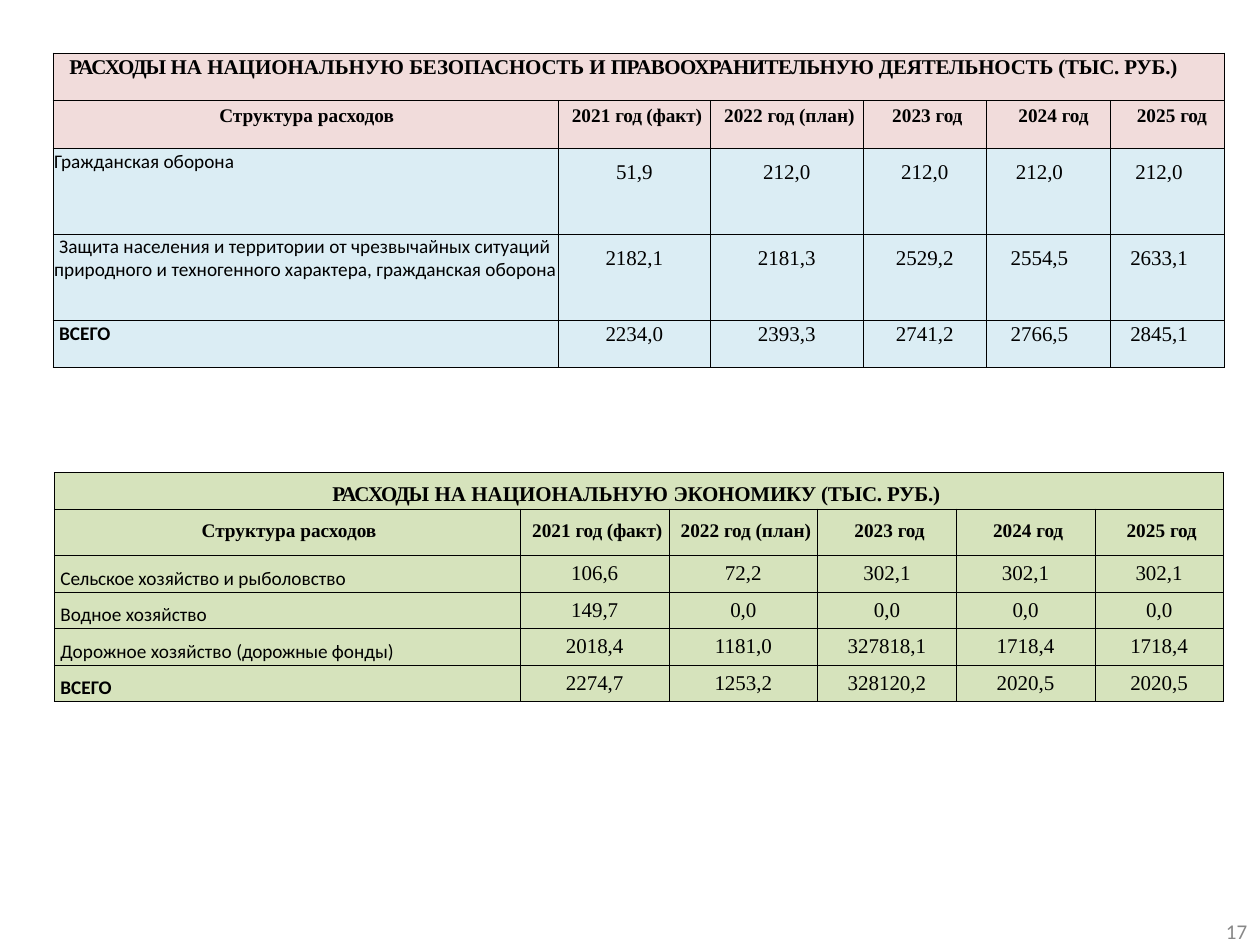
from lxml import etree
from pptx import Presentation
from pptx import util as u
from pptx.dml.color import RGBColor
from pptx.enum import text
from pptx.oxml import ns

LEFT, CENTER, RIGHT = text.PP_ALIGN.LEFT, text.PP_ALIGN.CENTER, text.PP_ALIGN.RIGHT


def color(value):
    return RGBColor.from_string(value)


class BudgetSlide:
    """Holds the fonts, colours and current slide, and draws its elements."""

    serif, sans = "Times New Roman", "Calibri"
    ink, muted = "000000", "888888"

    def __init__(self, presentation):
        self.slide = presentation.slides.add_slide(presentation.slide_layouts[6])

    def paragraph(self, paragraph, runs, font, size, bold=False, hue=ink,
                  align=LEFT, indent=0, line=None):
        properties = paragraph._p.get_or_add_pPr()
        properties.set("marL", str(u.Inches(indent)))
        properties.set("indent", "0")
        paragraph.alignment = align
        if line:
            paragraph.line_spacing = u.Pt(line)
        paragraph.font.name, paragraph.font.size = font, u.Pt(size)
        paragraph.font.bold = bold
        paragraph.font.color.rgb = color(hue)
        for words, tracking in runs:
            run = paragraph.add_run()
            run.text = words
            if tracking:
                run._r.get_or_add_rPr().set("spc", str(round(tracking * 100)))

    def page_number(self, number, left, top, width, height):
        box = self.slide.shapes.add_textbox(*map(u.Inches, (left, top, width, height)))
        frame = box.text_frame
        frame.margin_left = frame.margin_right = frame.margin_bottom = 0
        frame.margin_top = u.Inches(0.1)
        self.paragraph(frame.paragraphs[0], [(number, 0)], self.sans, 12,
                       hue=self.muted, indent=0.04, line=12.4)

    def table(self, left, top, columns, rows):
        sizes = map(u.Inches, (left, top, sum(columns), sum(rows)))
        table = self.slide.shapes.add_table(len(rows), len(columns), *sizes).table
        table.first_row = table.horz_banding = False
        for column, width in zip(table.columns, columns):
            column.width = u.Inches(width)
        for row, height in zip(table.rows, rows):
            row.height = u.Inches(height)
        table.cell(0, 0).merge(table.cell(0, len(columns) - 1))
        return table

    def border(self, cell):
        properties = cell._tc.get_or_add_tcPr()
        for side in ("a:lnL", "a:lnR", "a:lnT", "a:lnB"):
            line = etree.SubElement(properties, ns.qn(side), w=str(u.Pt(0.5)))
            fill = etree.SubElement(line, ns.qn("a:solidFill"))
            etree.SubElement(fill, ns.qn("a:srgbClr"), val=self.ink)

    def fill_rows(self, table, fills):
        for row, fill in zip(table.rows, fills):
            for cell in row.cells:
                self.border(cell)
                cell.fill.solid()
                cell.fill.fore_color.rgb = color(fill)

    def cell(self, cell, lines, font, size, top, right=0, **style):
        cell.margin_left = cell.margin_bottom = 0
        cell.margin_top, cell.margin_right = u.Inches(top), u.Inches(right)
        frame = cell.text_frame
        for index, runs in enumerate(lines):
            paragraph = frame.add_paragraph() if index else frame.paragraphs[0]
            self.paragraph(paragraph, runs, font, size, **style)

    def title(self, table, runs, **style):
        self.cell(table.cell(0, 0), [runs], self.serif, 12, bold=True, line=13.7, **style)

    def header(self, table, indent, top, line, aligns, rights):
        style = dict(font=self.serif, size=11, top=top, line=line, bold=True)
        self.cell(table.cell(1, 0), [[("Структура расходов", 0)]], indent=indent, **style)
        for index, (runs, align, right) in enumerate(zip(YEARS, aligns, rights), 1):
            self.cell(table.cell(1, index), [runs], align=align, right=right,
                      indent=0.04 if align == CENTER else 0, **style)

    def record(self, table, row, lines, values, name_top, value_top,
               indent=0.05, line=None, rights=(0,) * 5):
        self.cell(table.cell(row, 0), lines, self.sans, 11, name_top, indent=indent,
                  line=12.8, bold=lines == TOTAL)
        for index, (value, right) in enumerate(zip(values.split(), rights), 1):
            self.cell(table.cell(row, index), [[(value, 0)]], self.serif, 12,
                      value_top, right, align=CENTER, line=line)


YEARS = [
    [("2021 ", 0), ("год (факт)", -0.1)],
    [("2022 ", 0), ("год ", -0.1), ("(план)", 0)],
    *([(f"{year} ", 0), ("год", -0.1)] for year in (2023, 2024, 2025)),
]
TOTAL = [[("ВСЕГО", 0)]]


def security_table(page):
    table = page.table(0.42, 0.42, [4.01, 1.21, 1.21, 0.98, 0.98, 0.91],
                       [0.38, 0.38, 0.68, 0.68, 0.38])
    page.fill_rows(table, ["F1DCDB"] * 2 + ["DBEDF4"] * 3)
    page.title(table, [("РАСХОДЫ ", -0.6), ("НА НАЦИОНАЛЬНУЮ", 0),
                       (" БЕЗОПАСНОСТЬ ", -0.1), ("И ", 0),
                       ("ПРАВООХРАНИТЕЛЬНУЮ ", -0.3),
                       ("ДЕЯТЕЛЬНОСТЬ (ТЫС. РУБ.)", -0.1)], top=0.02, indent=0.13)
    page.header(table, 1.32, 0.03, 12.5, [CENTER] * 3 + [RIGHT] * 2,
                [0, 0, 0, 0.17, 0.14])
    rights = [0, 0, 0, 0.14, 0.13]
    page.record(table, 2, [[("Гражданская оборона", 0)]],
                "51,9 212,0 212,0 212,0 212,0", 0.02, 0.1, 0.01, rights=rights)
    protection = [[("Защита населения и территории от чрезвычайных ситуаций", 0)],
                  [("природного и техногенного характера, гражданская оборона", 0)]]
    page.record(table, 3, protection, "2182,1 2181,3 2529,2 2554,5 2633,1",
                0.02, 0.1, 0.01, rights=rights)
    first_line = table.cell(3, 0).text_frame.paragraphs[0]
    first_line._p.get_or_add_pPr().set("marL", str(u.Inches(0.05)))
    page.record(table, 4, TOTAL, "2234,0 2393,3 2741,2 2766,5 2845,1",
                0.03, 0.01, line=14, rights=rights)


def economy_table(page):
    table = page.table(0.43, 3.75, [3.7, 1.18, 1.18, 1.1, 1.1, 1.02],
                       [0.29, 0.37] + [0.29] * 4)
    page.fill_rows(table, ["D6E3BC"] * 6)
    page.title(table, [("РАСХОДЫ", -0.6), (" НА НАЦИОНАЛЬНУЮ ", 0),
                       ("ЭКОНОМИКУ (ТЫС. РУБ.)", -0.1)],
               top=0.08, right=0.04, align=CENTER)
    page.header(table, 1.17, 0.09, None, [CENTER] * 5, [0] * 5)
    records = [
        ([[("Сельское ", -0.1), ("хозяйство и рыболовство", 0)]],
         "106,6 72,2 302,1 302,1 302,1"),
        ([[("Водное хозяйство", 0)]], "149,7 0,0 0,0 0,0 0,0"),
        ([[("Дорожное хозяйство ", 0), ("(дорожные ", -0.1), ("фонды)", 0)]],
         "2018,4 1181,0 327818,1 1718,4 1718,4"),
        (TOTAL, "2274,7 1253,2 328120,2 2020,5 2020,5"),
    ]
    for row, (lines, values) in enumerate(records, 2):
        page.record(table, row, lines, values, 0.1, 0.05)


def main():
    presentation = Presentation()
    presentation.slide_width, presentation.slide_height = u.Inches(10), u.Inches(7.5)
    page = BudgetSlide(presentation)
    page.page_number("17", 9.69, 7.22, 0.27, 0.25)
    security_table(page)
    economy_table(page)
    presentation.save("out.pptx")


if __name__ == "__main__":
    main()
